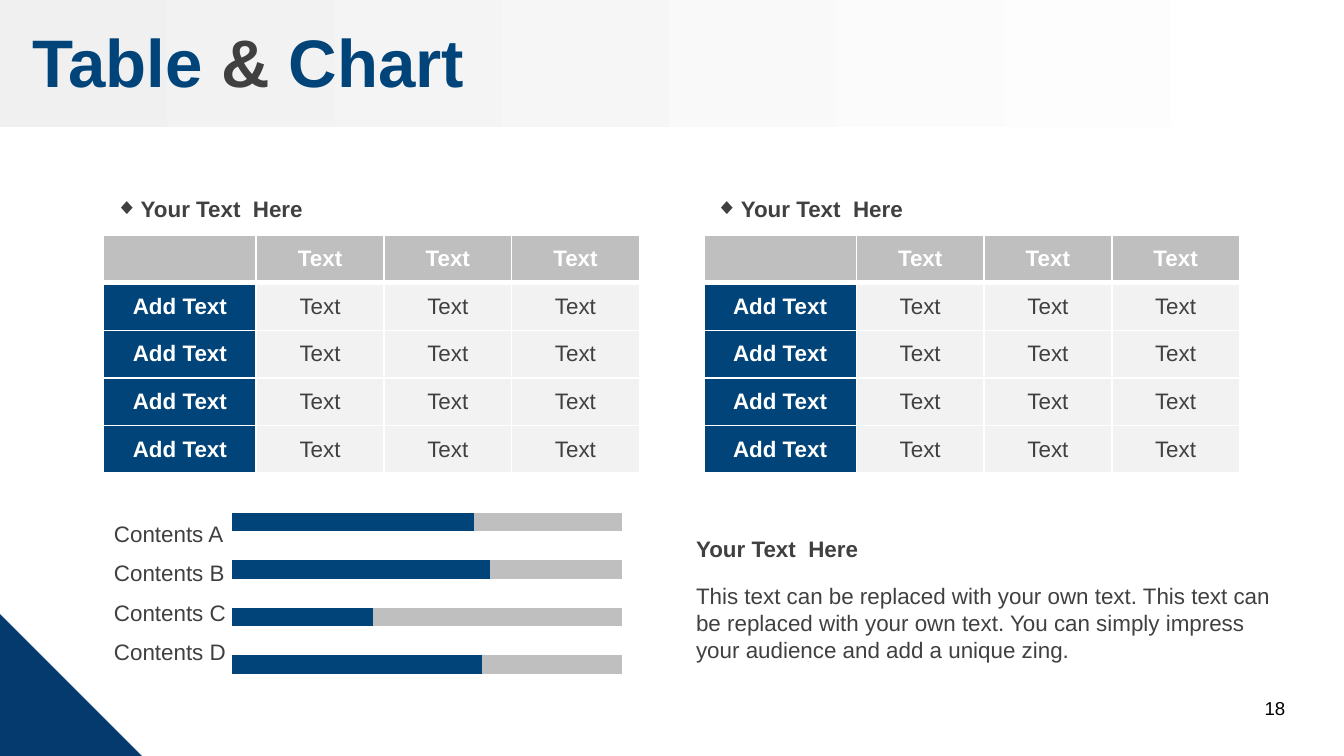
"""Build the table and chart slide."""
import dataclasses

import lxml.etree
import pptx
import pptx.chart.data
import pptx.dml.color
import pptx.enum.chart
import pptx.enum.shapes
import pptx.enum.text
import pptx.oxml.ns
import pptx.util

Pt = pptx.util.Pt
Align = pptx.enum.text.PP_ALIGN
Anchor = pptx.enum.text.MSO_ANCHOR
Kind = pptx.enum.shapes.MSO_SHAPE
FONT = "Arial"
NAVY, GREY, PALE, DARK, WHITE = "004479", "BFBFBF", "F2F2F2", "404040", "FFFFFF"
HEAD = "Your Text  Here"
BODY = ("This text can be replaced with your own text. This text can be replaced "
        "with your own text. You can simply impress your audience and add a unique zing.")


@dataclasses.dataclass
class Note:
    text: str
    left: float
    top: float
    width: float
    height: float = 21.8
    size: float = 12
    tint: str = DARK
    bold: bool = False
    mark: bool = False
    align: Align = Align.LEFT


@dataclasses.dataclass
class Series:
    name: str
    values: tuple
    tint: str


def color(code: str) -> pptx.dml.color.RGBColor:
    return pptx.dml.color.RGBColor.from_string(code)


def node(parent, tag: str, **attrs):
    return lxml.etree.SubElement(parent, pptx.oxml.ns.qn(tag), attrs)


def paint(shape, code: str) -> None:
    shape.fill.solid()
    shape.fill.fore_color.rgb = color(code)


def add_run(para, text: str, size: float, tint: str, bold: bool = False) -> None:
    run = para.add_run()
    run.text = text
    run.font.name = FONT
    run.font.size = Pt(size)
    run.font.bold = bold
    run.font.color.rgb = color(tint)


def add_note(slide, note: Note) -> None:
    box = slide.shapes.add_textbox(Pt(note.left), Pt(note.top), Pt(note.width), Pt(note.height))
    box.text_frame.word_wrap = True
    para = box.text_frame.paragraphs[0]
    para.alignment = note.align
    if note.mark:
        props = para._p.get_or_add_pPr()
        props.set("marL", str(Pt(13.5)))
        props.set("indent", str(-Pt(13.5)))
        node(props, "a:buFont", typeface=FONT)
        node(props, "a:buChar", char="◆")
    add_run(para, note.text, note.size, note.tint, note.bold)


def add_shape(slide, kind: Kind, left: float, top: float, width: float, height: float):
    shape = slide.shapes.add_shape(kind, Pt(left), Pt(top), Pt(width), Pt(height))
    shape.shadow.inherit = False
    shape.line.fill.background()
    return shape


def add_back(slide) -> None:
    band = add_shape(slide, Kind.RECTANGLE, 0, 0, 717, 68)
    band.fill.gradient()
    band.fill.gradient_angle = 0
    for stop, code in zip(band.fill.gradient_stops, ("F0F0F0", WHITE)):
        stop.color.rgb = color(code)
    wedge = add_shape(slide, Kind.RIGHT_TRIANGLE, -0.5, 328.5, 77, 77)
    paint(wedge, "053A6F")
    list_ = wedge.element.spPr.find(pptx.oxml.ns.qn("a:effectLst"))
    shade = node(list_, "a:outerShdw", blurRad=str(Pt(3.1)), dist=str(Pt(1.8)), dir="5400000")
    tone = node(shade, "a:srgbClr", val="000000")
    node(tone, "a:alpha", val="35000")


def add_title(slide) -> None:
    title = slide.shapes.title
    title.left, title.top, title.width, title.height = Pt(0), Pt(2), Pt(720), Pt(61)
    frame = title.text_frame
    frame.auto_size = pptx.enum.text.MSO_AUTO_SIZE.NONE
    frame.vertical_anchor = Anchor.MIDDLE
    para = frame.paragraphs[0]
    para.alignment = Align.LEFT
    for text, tint in ((" ", "3DA9D5"), ("Table ", NAVY), ("& ", DARK), ("Chart", NAVY)):
        add_run(para, text, 36, tint, True)
    title.element.getparent().append(title.element)


def add_edges(cell, row: int) -> None:
    props = cell._tc.get_or_add_tcPr()
    sides = {"L": 1, "R": 1, "T": 3 if row == 1 else 1, "B": 3 if row == 0 else 1}
    for side, width in sides.items():
        line = node(props, f"a:ln{side}", w=str(Pt(width)))
        node(node(line, "a:solidFill"), "a:srgbClr", val=WHITE)


def add_table(slide, left: float) -> None:
    table = slide.shapes.add_table(5, 4, Pt(left), Pt(126), Pt(287), Pt(127.5)).table
    table.first_row = table.horz_banding = False
    for spot, col in enumerate(table.columns):
        col.width = Pt(68.4 if spot == 0 else 68.4)
    table.columns[0].width = Pt(81.8)
    for row in table.rows:
        row.height = Pt(25.5)
    for row in range(5):
        for col in range(4):
            cell = table.cell(row, col)
            cell.vertical_anchor = Anchor.MIDDLE
            cell.margin_top = cell.margin_bottom = Pt(0)
            add_edges(cell, row)
            paint(cell, GREY if row == 0 else NAVY if col == 0 else PALE)
            if row or col:
                strong = row == 0 or col == 0
                para = cell.text_frame.paragraphs[0]
                para.alignment = Align.CENTER
                add_run(para, "Text" if col else "Add Text", 12, WHITE if strong else DARK, strong)


def add_chart(slide, parts: list[Series]) -> None:
    data = pptx.chart.data.CategoryChartData()
    data.categories = ["1", "2", "3", "4"]
    for part in parts:
        data.add_series(part.name, part.values)
    chart = slide.shapes.add_chart(pptx.enum.chart.XL_CHART_TYPE.BAR_STACKED_100, Pt(120.2),
                                   Pt(265), Pt(217.4), Pt(105.8), data).chart
    chart.has_legend = chart.has_title = False
    chart.font.name = FONT
    chart.font.size = Pt(18)
    chart.font.color.rgb = color("000000")
    chart.value_axis.has_major_gridlines = False
    chart.value_axis.visible = chart.category_axis.visible = False
    plot = chart.plots[0]
    plot.gap_width, plot.overlap, plot.vary_by_categories = 157, 100, False
    for series, part in zip(plot.series, parts):
        paint(series.format, part.tint)


def main() -> None:
    deck = pptx.Presentation()
    deck.slide_width, deck.slide_height = Pt(720), Pt(405)
    slide = deck.slides.add_slide(deck.slide_layouts[5])
    add_back(slide)
    add_title(slide)
    for left in (55.5, 377):
        add_note(slide, Note(HEAD, left - 0.7, 100.8, 131, bold=True, mark=True))
        add_table(slide, left)
    for step, mark in enumerate("ABCD"):
        add_note(slide, Note(f"Contents {mark}", 54, 275 + 21.15 * step, 79.2))
    add_chart(slide, [Series("Series 1", (64, 36, 66, 62), NAVY),
                      Series("Series 2", (36, 64, 34, 38), GREY)])
    add_note(slide, Note(BODY, 365.8, 308.2, 323.3, 65.5))
    add_note(slide, Note(HEAD, 365.8, 283, 323.3, bold=True))
    add_note(slide, Note("18", 527.8, 370, 167.8, size=10, tint="000000", align=Align.RIGHT))
    deck.save("out.pptx")


if __name__ == "__main__":
    main()
